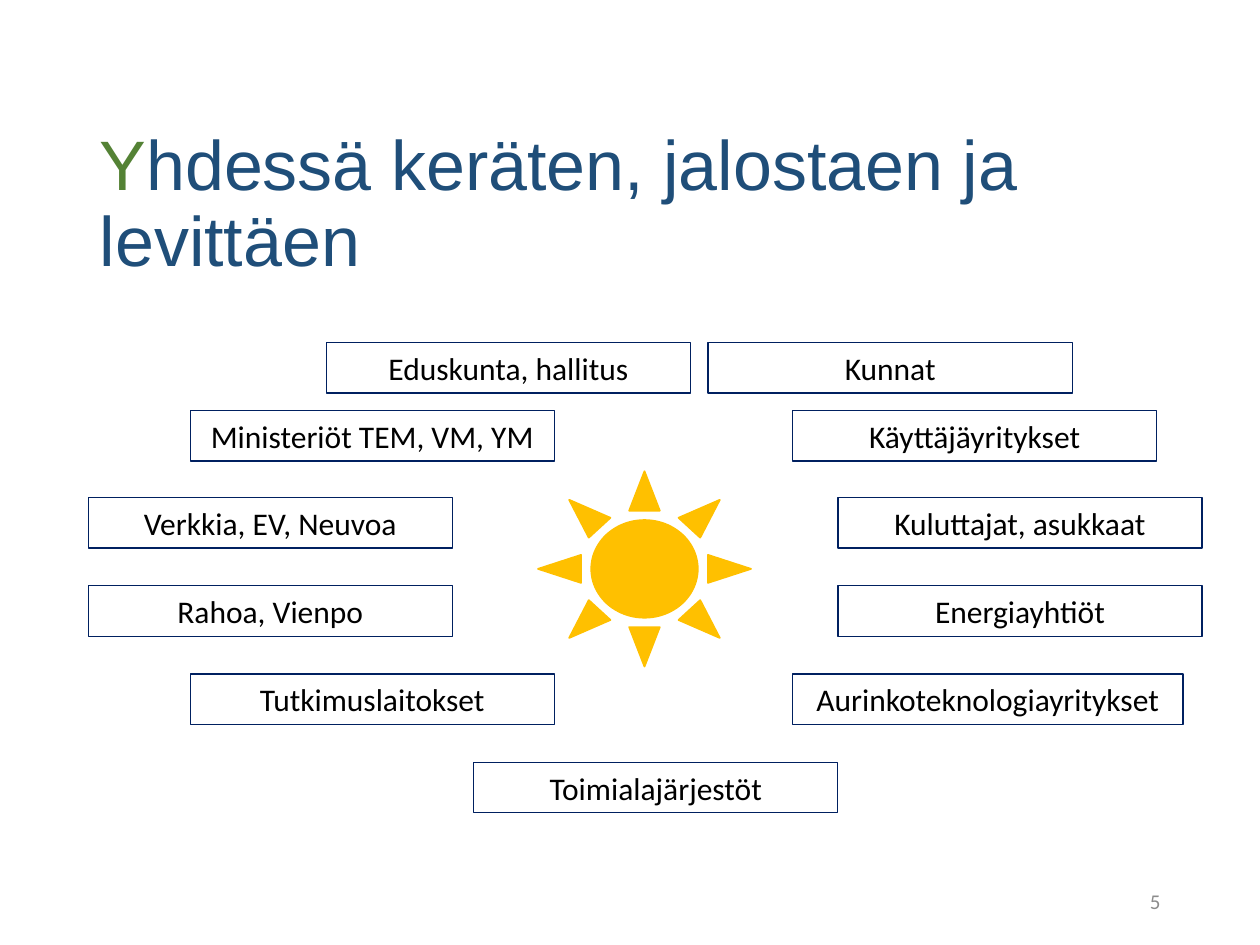
from pptx import Presentation
from pptx.dml.color import RGBColor
from pptx.enum.shapes import MSO_SHAPE
from pptx.enum.text import MSO_ANCHOR, MSO_AUTO_SIZE, PP_ALIGN
from pptx.util import Inches, Pt

RECT, SUN = MSO_SHAPE.RECTANGLE, MSO_SHAPE.SUN
LEFT, MID, RIGHT = PP_ALIGN.LEFT, PP_ALIGN.CENTER, PP_ALIGN.RIGHT
CENTER, NO_FIT = MSO_ANCHOR.MIDDLE, MSO_AUTO_SIZE.NONE

TITLE = [("Y", "548235"), ("hdessä keräten, jalostaen ja levittäen", "1F4E79")]
WIDTH, HEIGHT = 2.89, 0.4
ROWS = [
    (2.72, [("Eduskunta, hallitus", 2.59), ("Kunnat", 5.62)]),
    (3.26, [("Ministeriöt TEM, VM, YM", 1.51), ("Käyttäjäyritykset", 6.29)]),
    (3.95, [("Verkkia, EV, Neuvoa", 0.7), ("Kuluttajat, asukkaat", 6.65)]),
    (4.65, [("Rahoa, Vienpo", 0.7), ("Energiayhtiöt", 6.65)]),
    (5.35, [("Tutkimuslaitokset", 1.51), ("Aurinkoteknologiayritykset", 6.29)]),
    (6.05, [("Toimialajärjestöt", 3.76)]),
]
WIDE = {"Aurinkoteknologiayritykset": 3.1}


def color(code):
    return RGBColor.from_string(code)


def write(shape, runs, size=18, face="Calibri", align=MID, space=None):
    frame = shape.text_frame
    frame.word_wrap = True
    frame.auto_size = NO_FIT
    frame.vertical_anchor = CENTER
    para = frame.paragraphs[0]
    para.alignment = align
    para.line_spacing = space
    for text, code in runs:
        run = para.add_run()
        run.text = text
        run.font.size = Pt(size)
        run.font.name = face
        run.font.color.rgb = color(code)


def draw(slide, kind, box, line, width, fill=None):
    shape = slide.shapes.add_shape(kind, *map(Inches, box))
    shape.shadow.inherit = False
    shape.line.color.rgb = color(line)
    shape.line.width = Pt(width)
    if fill:
        shape.fill.solid()
        shape.fill.fore_color.rgb = color(fill)
    else:
        shape.fill.background()
    return shape


def main():
    """Build the slide of parties around the sun."""
    deck = Presentation()
    deck.slide_width, deck.slide_height = Inches(10), Inches(7.5)
    slide = deck.slides.add_slide(deck.slide_layouts[5])

    title = slide.shapes.title
    title.left, title.top = Inches(0.69), Inches(0.91)
    title.width, title.height = Inches(8.62), Inches(1.45)
    write(title, TITLE, size=40, face="Arial", align=LEFT, space=0.9)

    page = slide.shapes.add_textbox(*map(Inches, (7.06, 6.95, 2.25, 0.4)))
    write(page, [("5", "8C8C8C")], size=12, align=RIGHT)

    for top, row in ROWS:
        for name, left in row:
            box = (left, top, WIDE.get(name, WIDTH), HEIGHT)
            party = draw(slide, RECT, box, "002060", 0.75)
            write(party, [(name, "000000")])

    draw(slide, SUN, (4.27, 3.74, 1.69, 1.55), "FFC000", 1, fill="FFC000")
    deck.save("out.pptx")


if __name__ == "__main__":
    main()
